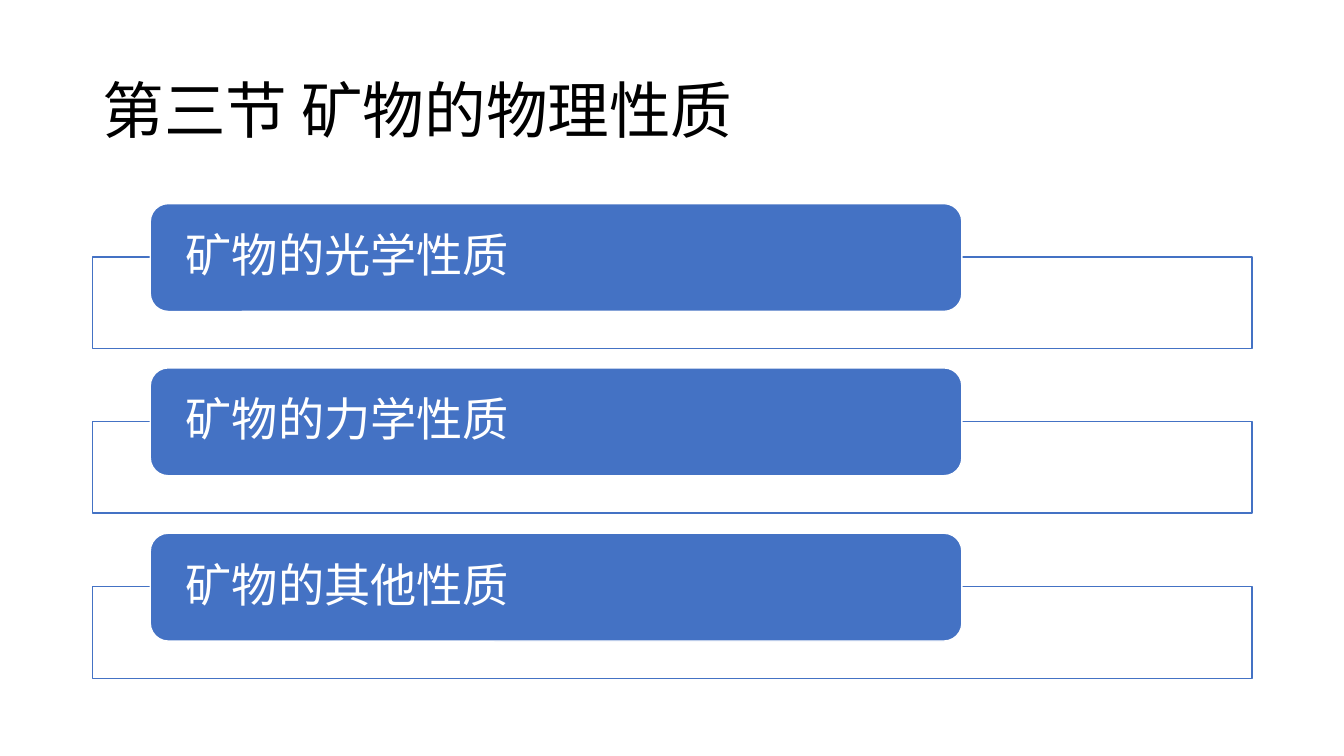
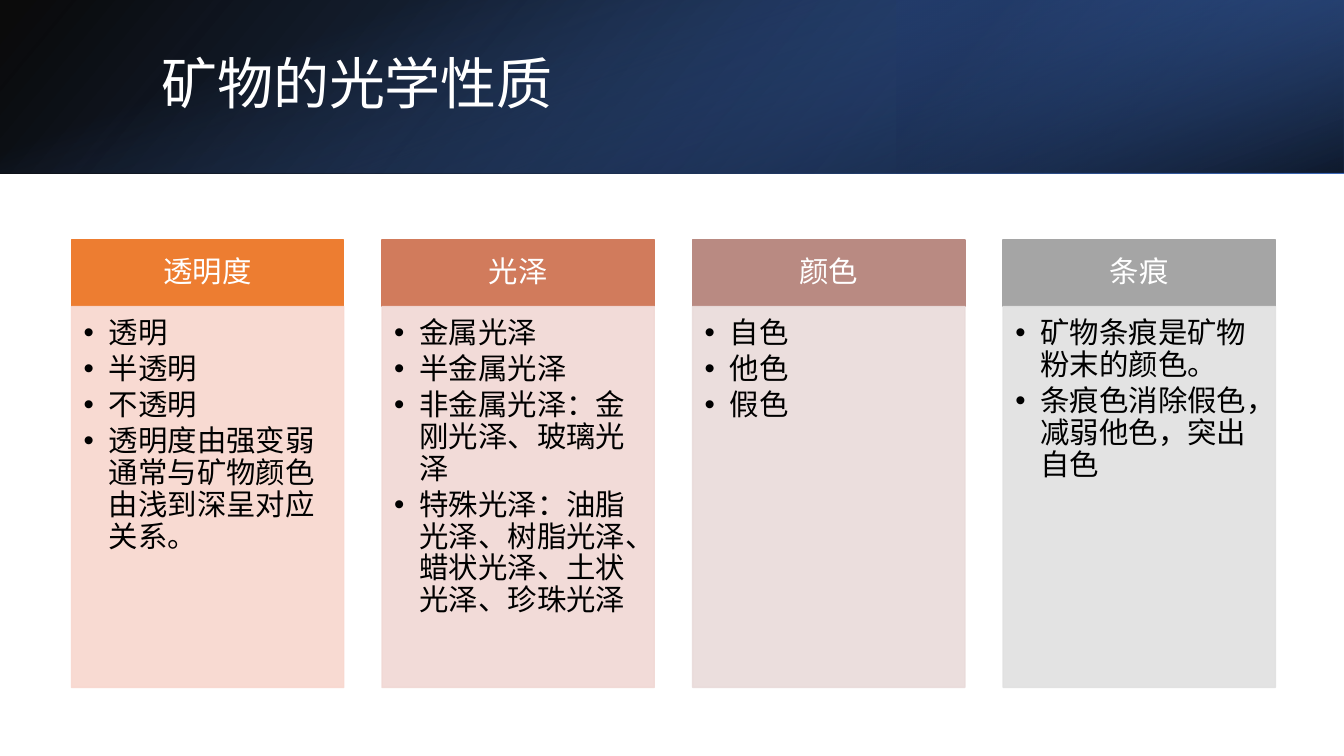
"""Build two slides on the physical properties of minerals."""
from dataclasses import dataclass

from lxml import etree
from pptx import Presentation
from pptx.dml.color import RGBColor
from pptx.dml.fill import FillFormat
from pptx.enum.shapes import MSO_SHAPE
from pptx.enum.text import MSO_ANCHOR, PP_ALIGN
from pptx.oxml import parse_xml
from pptx.oxml.ns import nsdecls, qn
from pptx.shapes.autoshape import Shape
from pptx.slide import Slide
from pptx.util import Pt

RECT = MSO_SHAPE.RECTANGLE
ROUND = MSO_SHAPE.ROUNDED_RECTANGLE
TOP, MIDDLE = MSO_ANCHOR.TOP, MSO_ANCHOR.MIDDLE
LEFT, CENTER = PP_ALIGN.LEFT, PP_ALIGN.CENTER
PX = 9144
WIDE, HIGH, BAND = 1333, 750, 172
FONT = "Noto Sans CJK SC"
INK = {
    "white": "FFFFFF", "black": "000000", "blue": "4472C4",
    "deep": "2F5597", "navy": "203864",
    "orange": "ED7D31", "peach": "F8D7CE",
    "clay": "D17B5C", "blush": "F1D8D4",
    "rose": "B98A82", "mauve": "E9DBDA",
    "gray": "A5A5A5", "mist": "E1E1E1",
}

Box = tuple[int, int, int, int]


@dataclass(frozen=True)
class Stop:
    pos: int
    ink: str
    alpha: int = 100


@dataclass(frozen=True)
class Veil:
    box: Box
    angle: int
    stops: tuple[Stop, Stop]
    turn: int = 0
    flip: bool = False


@dataclass(frozen=True)
class Card:
    head: str
    ink: str
    pale: str
    items: tuple[str, ...]


TOPICS = ("矿物的光学性质", "矿物的力学性质", "矿物的其他性质")
VEILS = (
    Veil((0, 0, WIDE, BAND), 140,
         (Stop(0, "black", 96), Stop(100, "deep")), flip=True),
    Veil((889, 0, 444, BAND), 320,
         (Stop(19, "navy", 68), Stop(100, "blue", 79)), turn=180, flip=True),
    Veil(((WIDE - BAND) // 2, (BAND - WIDE) // 2, BAND, WIDE), 340,
         (Stop(23, "blue", 0), Stop(99, "black", 74)), turn=90),
)
CARDS = (
    Card("透明度", "orange", "peach",
         ("透明", "半透明", "不透明",
          "透明度由强变弱通常与矿物颜色由浅到深呈对应关系。")),
    Card("光泽", "clay", "blush",
         ("金属光泽", "半金属光泽", "非金属光泽：金刚光泽、玻璃光泽",
          "特殊光泽：油脂光泽、树脂光泽、蜡状光泽、土状光泽、珍珠光泽")),
    Card("颜色", "rose", "mauve", ("自色", "他色", "假色")),
    Card("条痕", "gray", "mist",
         ("矿物条痕是矿物粉末的颜色。", "条痕色消除假色，减弱他色，突出自色")),
)


def scale(box: Box) -> list[int]:
    """Turn a box in px into EMU."""
    return [n * PX for n in box]


def tint(fill: FillFormat, ink: str, alpha: int = 100) -> None:
    """Set a solid colour with an opacity in percent."""
    fill.solid()
    fill.fore_color.rgb = RGBColor.from_string(INK[ink])
    if alpha < 100:
        node = fill._xPr.find(qn("a:solidFill")).find(qn("a:srgbClr"))
        etree.SubElement(node, qn("a:alpha")).set("val", str(alpha * 1000))


def block(slide: Slide, box: Box, ink: str, edge: str, kind: MSO_SHAPE = RECT,
          alpha: int = 100, fade: int = 100) -> Shape:
    """Draw a filled and outlined shape."""
    shape = slide.shapes.add_shape(kind, *scale(box))
    shape.shadow.inherit = False
    tint(shape.fill, ink, alpha)
    shape.line.width = Pt(1)
    tint(shape.line.fill, edge, fade)
    return shape


def write(shape: Shape, *lines: str, size: int, ink: str = "white",
          align: PP_ALIGN = LEFT, anchor: MSO_ANCHOR = MIDDLE,
          pad: Box = (10, 5, 10, 5), after: int = 0,
          bullet: bool = False) -> None:
    """Fill a shape with formatted paragraphs."""
    frame = shape.text_frame
    frame.word_wrap = True
    frame.vertical_anchor = anchor
    (frame.margin_left, frame.margin_top,
     frame.margin_right, frame.margin_bottom) = scale(pad)
    for i, line in enumerate(lines):
        para = frame.add_paragraph() if i else frame.paragraphs[0]
        para.alignment = align
        para.line_spacing = 0.9
        para.space_after = Pt(after)
        if bullet:
            props = para._p.get_or_add_pPr()
            props.set("marL", str(25 * PX))
            props.set("indent", str(-25 * PX))
            etree.SubElement(props, qn("a:buFont")).set("typeface", "Arial")
            etree.SubElement(props, qn("a:buChar")).set("char", "•")
        run = para.add_run()
        run.text = line
        run.font.size = Pt(size)
        run.font.name = FONT
        run.font.color.rgb = RGBColor.from_string(INK[ink])
        face = etree.SubElement(run._r.get_or_add_rPr(), qn("a:ea"))
        face.set("typeface", FONT)


def title(slide: Slide, text: str, box: Box, size: int, ink: str) -> None:
    """Add a slide title."""
    write(slide.shapes.add_textbox(*scale(box)), text, size=size, ink=ink)


def cover(slide: Slide, veil: Veil) -> None:
    """Draw one gradient layer of the title band."""
    shape = slide.shapes.add_shape(RECT, *scale(veil.box))
    shape.shadow.inherit = False
    shape.line.fill.background()
    shape.fill.background()
    shape.rotation = veil.turn
    props = shape._element.spPr
    if veil.flip:
        props.find(qn("a:xfrm")).set("flipH", "1")
    stops = "".join(
        f'<a:gs pos="{s.pos * 1000}"><a:srgbClr val="{INK[s.ink]}">'
        f'<a:alpha val="{s.alpha * 1000}"/></a:srgbClr></a:gs>'
        for s in veil.stops)
    grad = parse_xml(
        f'<a:gradFill {nsdecls("a")}><a:gsLst>{stops}</a:gsLst>'
        f'<a:lin ang="{veil.angle * 60000}" scaled="0"/></a:gradFill>')
    props.replace(props.find(qn("a:noFill")), grad)


def outline(slide: Slide) -> None:
    """Draw the section slide with its list of topics."""
    title(slide, "第三节 矿物的物理性质", (92, 40, 1150, 145), 44, "black")
    for i, topic in enumerate(TOPICS):
        top = 202 + i * 327 // 2
        block(slide, (92, top + 53, 1150, 91), "white", "blue", alpha=90)
        label = block(slide, (149, top, 805, 107), "blue", "white", ROUND)
        write(label, topic, size=33, pad=(30, 0, 30, 0))


def optics(slide: Slide) -> None:
    """Draw the slide with a card for each optical property."""
    for veil in VEILS:
        cover(slide, veil)
    title(slide, TOPICS[0], (150, 38, 1098, 96), 40, "white")
    for i, card in enumerate(CARDS):
        left = 71 + i * 308
        head = block(slide, (left, 238, 270, 66), card.ink, card.ink)
        write(head, card.head, size=21, align=CENTER, pad=(16, 9, 16, 9))
        body = block(slide, (left, 304, 270, 378), card.pale, card.pale,
                     alpha=90, fade=90)
        write(body, *card.items, size=21, ink="black", anchor=TOP,
              pad=(12, 12, 16, 18), after=3, bullet=True)


def main() -> None:
    """Build and save the deck."""
    deck = Presentation()
    deck.slide_width, deck.slide_height = WIDE * PX, HIGH * PX
    for draw in (outline, optics):
        draw(deck.slides.add_slide(deck.slide_layouts[6]))
    deck.save("out.pptx")


if __name__ == "__main__":
    main()
